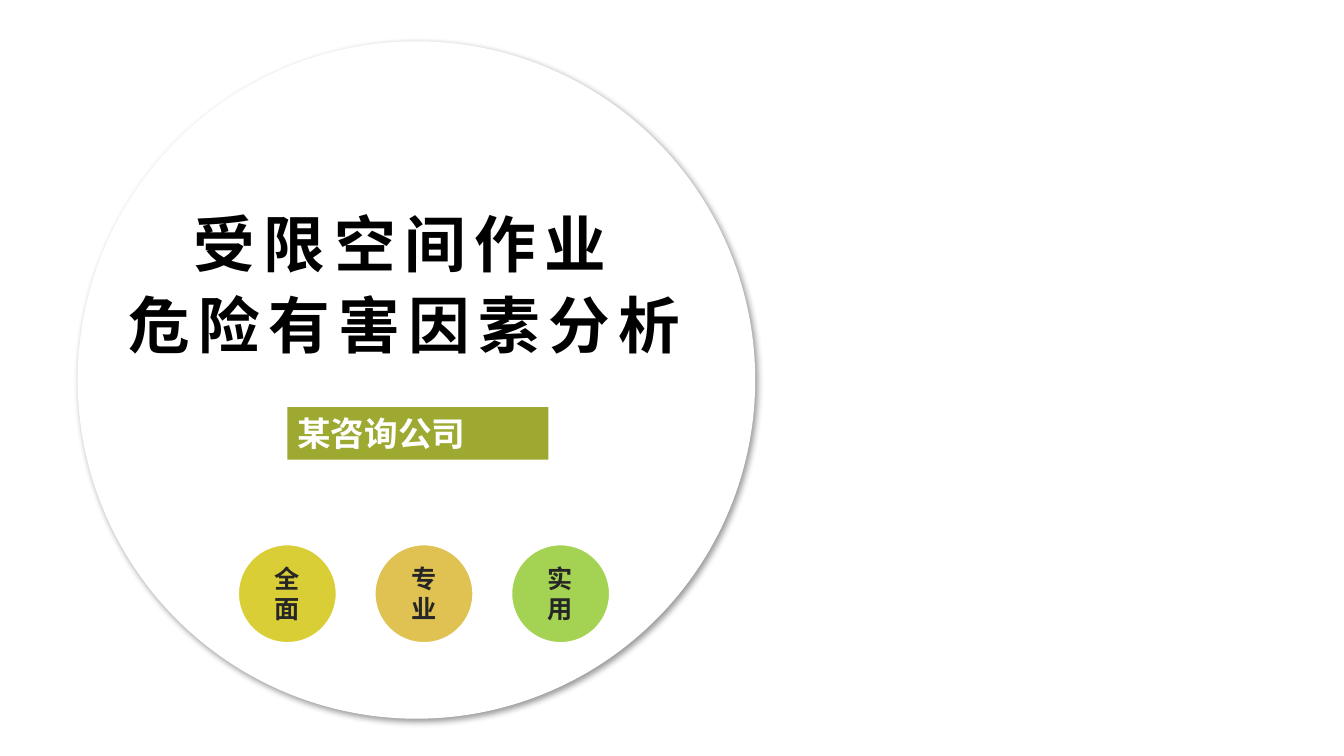
from lxml.etree import SubElement
from pptx import Presentation
from pptx.dml.color import RGBColor
from pptx.enum.shapes import MSO_SHAPE as Shape
from pptx.enum.text import MSO_ANCHOR as Anchor, PP_ALIGN as Align
from pptx.oxml.ns import qn
from pptx.util import Inches, Pt

WHITE = RGBColor(0xFF, 0xFF, 0xFF)
BLACK = RGBColor(0x00, 0x00, 0x00)
CHARCOAL = RGBColor(0x26, 0x26, 0x26)
OLIVE = RGBColor(0x9E, 0xA9, 0x32)
YELLOW = RGBColor(0xDA, 0xCE, 0x36)
SAND = RGBColor(0xE0, 0xC2, 0x52)
GREEN = RGBColor(0xA4, 0xD2, 0x52)

BADGE_SIZE = 0.98
BADGE_LEFT, BADGE_TOP, BADGE_STEP = 2.36, 5.4, 1.355


class CoverSlide:
    title_font = "Noto Sans CJK JP"
    body_font = "Noto Sans CJK SC"
    badge_font = "Arial"

    def __init__(self, presentation):
        self.slide = presentation.slides.add_slide(presentation.slide_layouts[6])

    def add_filled_shape(self, kind, left, top, width, height, color):
        shape = self.slide.shapes.add_shape(
            kind, Inches(left), Inches(top), Inches(width), Inches(height))
        shape.shadow.inherit = False
        shape.fill.solid()
        shape.fill.fore_color.rgb = color
        shape.line.fill.background()
        return shape

    def add_run(self, paragraph, text, font, size, color, spacing=0):
        """Add a bold run; spacing is the extra gap between letters in points."""
        run = paragraph.add_run()
        run.text = text
        run.font.name = font
        run.font.size = Pt(size)
        run.font.bold = True
        run.font.color.rgb = color
        properties = run.font._element
        if spacing:
            properties.set("spc", str(spacing * 100))
        east_asian = SubElement(properties, qn("a:ea"))
        east_asian.set("typeface", self.body_font if font == self.badge_font else font)

    def add_disc(self, left, top, size):
        """Add the large white disc with a soft shadow to the lower right."""
        disc = self.add_filled_shape(Shape.OVAL, left, top, size, size, WHITE)
        effects = disc._element.spPr.find(qn("a:effectLst"))
        shadow = SubElement(effects, qn("a:outerShdw"), blurRad=str(Pt(4)),
                            dist=str(Pt(3)), dir=str(45 * 60000),
                            algn="tl", rotWithShape="0")
        color = SubElement(shadow, qn("a:srgbClr"), val=str(BLACK))
        SubElement(color, qn("a:alpha"), val="40000")

    def add_title(self, left, top, width, height, lines):
        box = self.slide.shapes.add_textbox(
            Inches(left), Inches(top), Inches(width), Inches(height))
        frame = box.text_frame
        frame.word_wrap = True
        frame.vertical_anchor = Anchor.BOTTOM
        frame.margin_bottom = 0
        paragraph = frame.paragraphs[0]
        paragraph.alignment = Align.CENTER
        paragraph.line_spacing = 1.1
        for index, line in enumerate(lines):
            if index:
                paragraph.add_line_break()
            self.add_run(paragraph, line, self.title_font, 44, BLACK, spacing=6)

    def add_label(self, shape, text, font, size, color, alignment):
        frame = shape.text_frame
        frame.word_wrap = True
        frame.vertical_anchor = Anchor.MIDDLE
        paragraph = frame.paragraphs[0]
        paragraph.alignment = alignment
        self.add_run(paragraph, text, font, size, color)

    def add_banner(self, left, top, width, height, text):
        banner = self.add_filled_shape(Shape.RECTANGLE, left, top, width, height, OLIVE)
        self.add_label(banner, text, self.body_font, 24, WHITE, Align.JUSTIFY)

    def add_badge(self, left, top, color, text):
        badge = self.add_filled_shape(
            Shape.OVAL, left, top, BADGE_SIZE, BADGE_SIZE, color)
        badge.line.color.rgb = WHITE
        badge.line.width = Pt(1.5)
        self.add_label(badge, text, self.badge_font, 18, CHARCOAL, Align.CENTER)


def main():
    presentation = Presentation()
    presentation.slide_width = Inches(13.33)
    presentation.slide_height = Inches(7.5)

    cover = CoverSlide(presentation)
    cover.add_disc(0.77, 0.41, 6.72)
    cover.add_title(0.53, 1.83, 6.96, 1.75, ["受限空间作业", "危险有害因素分析"])
    cover.add_banner(2.85, 4.04, 2.59, 0.52, "某咨询公司")
    badges = [("全面", YELLOW), ("专业", SAND), ("实用", GREEN)]
    for index, (text, color) in enumerate(badges):
        cover.add_badge(BADGE_LEFT + index * BADGE_STEP, BADGE_TOP, color, text)

    presentation.save("out.pptx")


if __name__ == "__main__":
    main()
